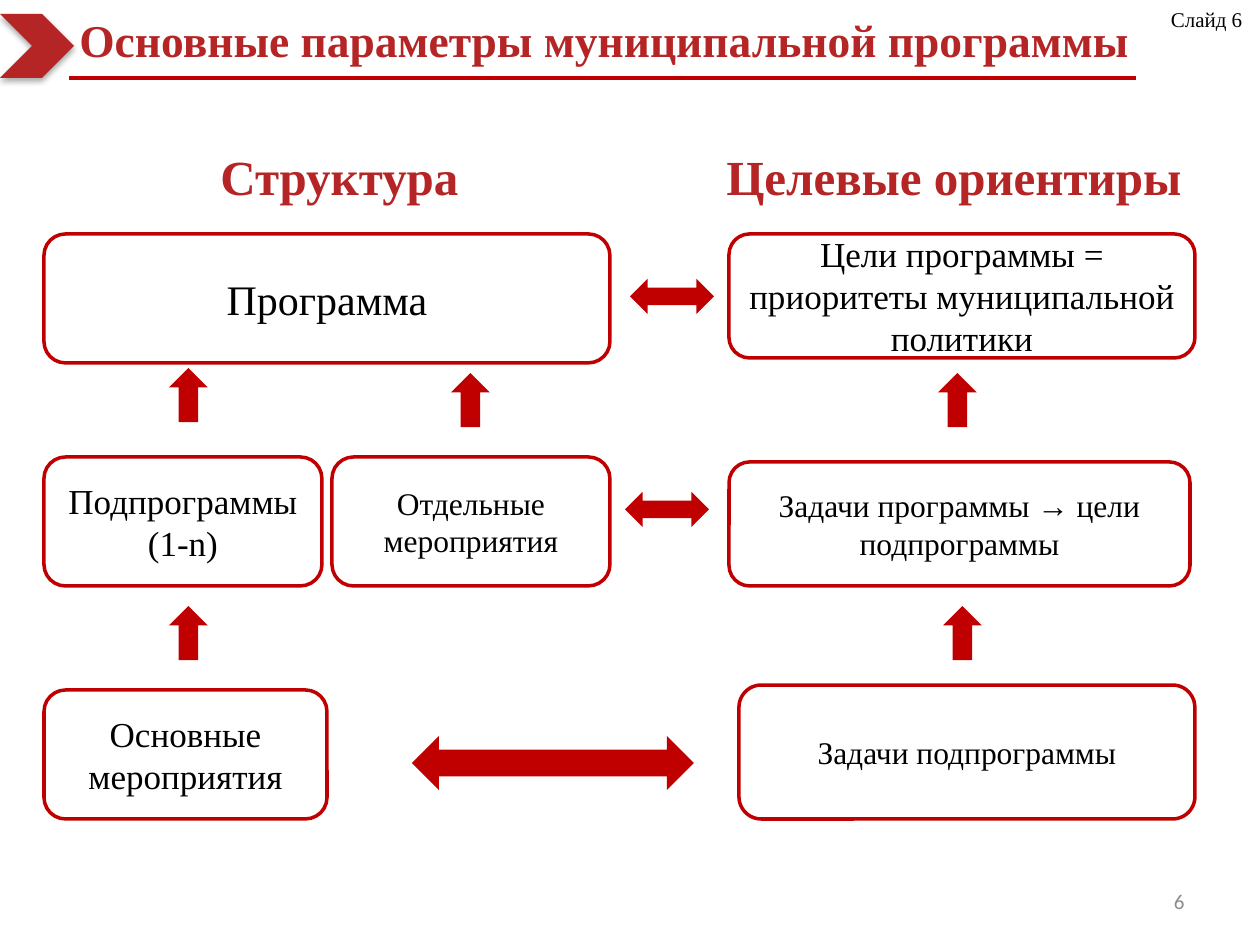
from typing import NamedTuple

from lxml import etree
from pptx import Presentation
from pptx.dml.color import RGBColor
from pptx.enum import shapes, text
from pptx.oxml import ns
from pptx.util import Emu, Pt

PX_PER_INCH = 126
CRIMSON = RGBColor(0xB5, 0x25, 0x25)
RED = RGBColor(0xC0, 0x00, 0x00)
BLACK = RGBColor(0x00, 0x00, 0x00)
WHITE = RGBColor(0xFF, 0xFF, 0xFF)
GRAY = RGBColor(0x8C, 0x8C, 0x8C)
SERIF = "Times New Roman"
LEFT, CENTER, RIGHT = text.PP_ALIGN.LEFT, text.PP_ALIGN.CENTER, text.PP_ALIGN.RIGHT
TOP, MIDDLE = text.MSO_ANCHOR.TOP, text.MSO_ANCHOR.MIDDLE
UP = shapes.MSO_SHAPE.UP_ARROW
BOTH_WAYS = shapes.MSO_SHAPE.LEFT_RIGHT_ARROW


class Rect(NamedTuple):
    left: int
    top: int
    width: int
    height: int


class Label(NamedTuple):
    rect: Rect
    words: str
    size: int
    color: RGBColor = CRIMSON
    bold: bool = False
    align: text.PP_ALIGN = LEFT
    anchor: text.MSO_ANCHOR = TOP
    font: str = SERIF
    wrap: bool = True


class Block(NamedTuple):
    rect: Rect
    words: str
    size: int


class Arrow(NamedTuple):
    kind: shapes.MSO_SHAPE
    rect: Rect


def px(length: int) -> Emu:
    return Emu(round(length * 914400 / PX_PER_INCH))


def emu(rect: Rect) -> list[Emu]:
    return [px(length) for length in rect]


def up_arrow(left: int, top: int) -> Arrow:
    return Arrow(UP, Rect(left, top, 39, 54))


LABELS = [
    Label(Rect(67, 1, 1134, 77), "Основные параметры муниципальной программы", 26,
          bold=True, anchor=MIDDLE),
    Label(Rect(903, 876, 294, 50), "6", 12, GRAY, align=RIGHT, anchor=MIDDLE, font="Calibri"),
    Label(Rect(208, 140, 266, 72), "Структура", 28, bold=True, wrap=False),
    Label(Rect(714, 140, 485, 72), "Целевые ориентиры", 28, bold=True, wrap=False),
    Label(Rect(1137, 0, 123, 38), "Слайд 6 ", 12, BLACK, align=RIGHT),
]
BLOCKS = [
    Block(Rect(44, 234, 566, 129), "Программа", 24),
    Block(Rect(44, 457, 278, 129), "Подпрограммы (1-n)", 20),
    Block(Rect(332, 457, 278, 129), "Отдельные мероприятия", 18),
    Block(Rect(44, 690, 283, 129), "Основные мероприятия", 20),
    Block(Rect(729, 234, 466, 124), "Цели программы = приоритеты муниципальной политики", 20),
    Block(Rect(729, 462, 461, 124), "Задачи программы → цели подпрограммы", 18),
    Block(Rect(739, 685, 456, 134), "Задачи подпрограммы", 18),
]
ARROWS = [
    up_arrow(169, 368),
    up_arrow(451, 373),
    up_arrow(938, 373),
    up_arrow(169, 606),
    up_arrow(943, 606),
    Arrow(BOTH_WAYS, Rect(630, 279, 84, 35)),
    Arrow(BOTH_WAYS, Rect(625, 492, 84, 35)),
    Arrow(BOTH_WAYS, Rect(412, 736, 282, 54)),
]


def write(box, label: Label) -> None:
    frame = box.text_frame
    frame.text = label.words
    frame.word_wrap = label.wrap
    frame.vertical_anchor = label.anchor
    para = frame.paragraphs[0]
    para.alignment = label.align
    font = para.runs[0].font
    font.name, font.size, font.bold = label.font, Pt(label.size), label.bold
    font.color.rgb = label.color


def add_filled(page, kind: shapes.MSO_SHAPE, rect: Rect, color: RGBColor):
    shape = page.shapes.add_shape(kind, *emu(rect))
    shape.shadow.inherit = False
    shape.fill.solid()
    shape.fill.fore_color.rgb = color
    shape.line.fill.background()
    return shape


def add_block(page, block: Block) -> None:
    box = add_filled(page, shapes.MSO_SHAPE.ROUNDED_RECTANGLE, block.rect, WHITE)
    box.line.color.rgb = RED
    box.line.width = Pt(2)
    write(box, Label(block.rect, block.words, block.size, BLACK, align=CENTER, anchor=MIDDLE))


def add_soft_shadow(shape) -> None:
    effects = shape._element.spPr.find(ns.qn("a:effectLst"))
    shadow = etree.SubElement(effects, ns.qn("a:outerShdw"), blurRad=str(Pt(3.5)),
                              dist=str(Pt(2.2)), dir="5400000", rotWithShape="0")
    color = etree.SubElement(shadow, ns.qn("a:srgbClr"), val=str(BLACK))
    etree.SubElement(color, ns.qn("a:alpha"), val="32000")


def main() -> None:
    deck = Presentation()
    deck.slide_width, deck.slide_height = px(1260), px(945)
    page = deck.slides.add_slide(deck.slide_layouts[6])

    # Title, headings and slide numbers
    for label in LABELS:
        write(page.shapes.add_textbox(*emu(label.rect)), label)

    # Programme structure and its targets
    for block in BLOCKS:
        add_block(page, block)
    for arrow in ARROWS:
        add_filled(page, arrow.kind, arrow.rect, RED)

    # Header chevron and underline
    chevron = add_filled(page, shapes.MSO_SHAPE.CHEVRON, Rect(0, 14, 74, 64), CRIMSON)
    add_soft_shadow(chevron)
    underline = page.shapes.add_connector(
        shapes.MSO_CONNECTOR.STRAIGHT, px(69), px(78), px(1136), px(78))
    underline.line.color.rgb = RED
    underline.line.width = Pt(2.25)
    etree.SubElement(underline._element.spPr, ns.qn("a:effectLst"))

    deck.save("out.pptx")


if __name__ == "__main__":
    main()
